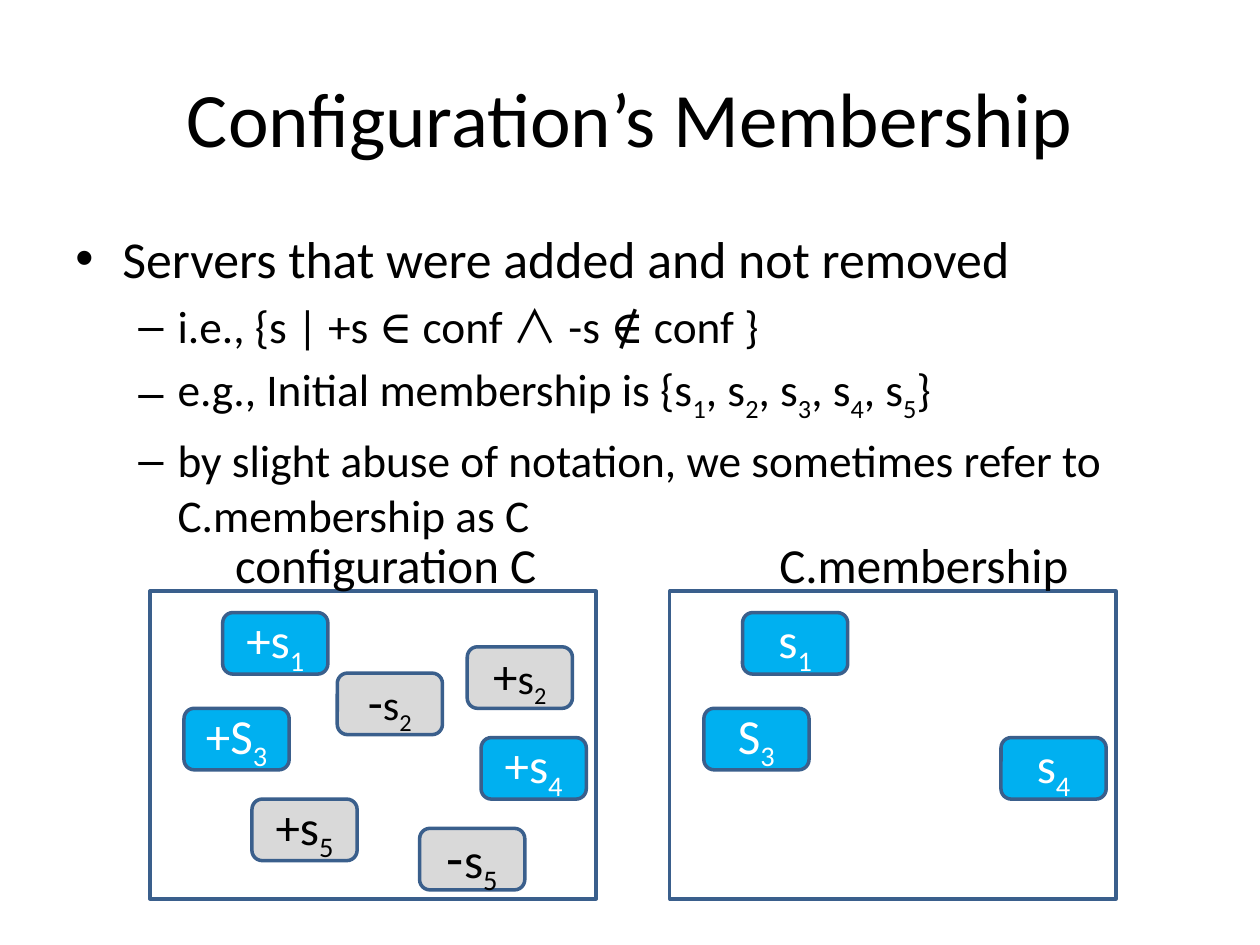
from lxml import etree
from pptx import Presentation
from pptx import util as u
from pptx.dml.color import RGBColor
from pptx.enum import shapes, text
from pptx.oxml.ns import qn

BLACK, WHITE, BLUE, GREY, BORDER = "000000", "FFFFFF", "00B0F0", "D9D9D9", "3A5F8C"
SYMBOL_FONTS = {"∈": "Cambria", "∉": "Cambria", "∧": "Noto Sans CJK KR"}

# Server entries: sign, name, sign size, name size, fill, offset in the frame (cm)
KEPT = [
    ("+", "s_1", 28, 28, BLUE, 1.47, 0.43),
    ("+", "s_4", 28, 28, BLUE, 6.68, 2.95),
    ("+", "S_3", 28, 28, BLUE, 0.69, 2.36),
]
REMOVED = [
    ("+", "s_2", 28, 24, GREY, 6.4, 1.12),
    ("+", "s_5", 28, 28, GREY, 2.06, 4.19),
    ("-", "s_2", 28, 24, GREY, 3.78, 1.65),
    ("-", "s_5", 32, 28, GREY, 5.44, 4.78),
]


def rgb(color):
    return RGBColor.from_string(color)


def add_run(paragraph, words, size, color=BLACK, font="Calibri", lowered=False):
    run = paragraph.add_run()
    run.text = words
    run.font.size = u.Pt(size)
    run.font.color.rgb = rgb(color)
    run.font.name = font
    properties = run.font._element
    etree.SubElement(properties, qn("a:ea")).set("typeface", font)
    if lowered:
        properties.set("baseline", "-25000")


def add_indexed(paragraph, words, size, color=BLACK):
    """Add runs; the character after each underscore becomes a subscript."""
    first, *rest = words.split("_")
    add_run(paragraph, first, size, color)
    for part in rest:
        add_run(paragraph, part[0], size, color, lowered=True)
        if part[1:]:
            add_run(paragraph, part[1:], size, color)


def add_formula(paragraph, words, size):
    """Add runs, giving each set symbol and its space their own font."""
    plain = ""
    for piece in words.split(" "):
        if piece in SYMBOL_FONTS:
            add_run(paragraph, plain, size)
            add_run(paragraph, piece + " ", size, font=SYMBOL_FONTS[piece])
            plain = ""
        else:
            plain += piece + " "
    add_run(paragraph, plain.rstrip(), size)


def add_text_area(slide, left, top, width, height):
    area = slide.shapes.add_textbox(u.Cm(left), u.Cm(top), u.Cm(width), u.Cm(height))
    area.text_frame.word_wrap = True
    return area.text_frame


def set_bullet(paragraph, mark, margin, hanging, space):
    paragraph.space_before = u.Pt(space)
    properties = paragraph._p.get_or_add_pPr()
    properties.set("marL", str(u.Cm(margin)))
    properties.set("indent", str(-u.Cm(hanging)))
    etree.SubElement(properties, qn("a:buFont")).set("typeface", "Arial")
    etree.SubElement(properties, qn("a:buChar")).set("char", mark)


def draw_title(slide, left, top, width, height):
    frame = add_text_area(slide, left, top, width, height)
    frame.vertical_anchor = text.MSO_ANCHOR.MIDDLE
    heading = frame.paragraphs[0]
    heading.alignment = text.PP_ALIGN.CENTER
    add_run(heading, "Configuration’s Membership", 44)


def draw_points(slide, left, top, width, height):
    frame = add_text_area(slide, left, top, width, height)
    main_point = frame.paragraphs[0]
    set_bullet(main_point, "•", 0.95, 0.95, 6)
    add_run(main_point, "Servers that were added and not removed", 29.6)
    details = [
        (add_formula, "i.e., {s | +s ∈ conf ∧ -s ∉ conf }"),
        (add_indexed, "e.g., Initial membership is {s_1, s_2, s_3, s_4, s_5}"),
        (add_indexed, "by slight abuse of notation, we sometimes refer to "
                      "C.membership as C"),
    ]
    for write, words in details:
        detail = frame.add_paragraph()
        detail.level = 1
        set_bullet(detail, "–", 2.06, 0.79, 5.2)
        write(detail, words, 25.9)


def add_box(slide, kind, left, top, width, height, fill=None):
    box = slide.shapes.add_shape(kind, u.Cm(left), u.Cm(top), u.Cm(width), u.Cm(height))
    box.shadow.inherit = False
    box.line.color.rgb = rgb(BORDER)
    box.line.width = u.Pt(2)
    if fill:
        box.fill.solid()
        box.fill.fore_color.rgb = rgb(fill)
    else:
        box.fill.background()
    return box


def draw_servers(slide, left, top, width, height, label, label_dx, servers, signed):
    # Frame
    add_box(slide, shapes.MSO_SHAPE.RECTANGLE, left, top, width, height)

    # Server entries
    for sign, name, sign_size, name_size, fill, dx, dy in servers:
        server = add_box(slide, shapes.MSO_SHAPE.ROUNDED_RECTANGLE,
                         left + dx, top + dy, 2.12, 1.24, fill)
        frame = server.text_frame
        frame.vertical_anchor = text.MSO_ANCHOR.MIDDLE
        entry = frame.paragraphs[0]
        entry.alignment = text.PP_ALIGN.CENTER
        color = WHITE if fill == BLUE else BLACK
        if signed:
            add_run(entry, sign, sign_size, color)
        add_indexed(entry, name, name_size, color)

    # Label above the frame
    caption = add_text_area(slide, left + label_dx, top - 1.27, 7.26, 1.45)
    add_run(caption.paragraphs[0], label, 28)


def main():
    deck = Presentation()
    deck.slide_width, deck.slide_height = u.Cm(25.4), u.Cm(19.05)
    slide = deck.slides.add_slide(deck.slide_layouts[6])
    draw_title(slide, 1.27, 0.76, 22.86, 3.18)
    draw_points(slide, 1.27, 4.45, 22.86, 6.53)
    draw_servers(slide, 3.02, 11.92, 9, 6.2, "configuration C", 1.47, KEPT + REMOVED, True)
    draw_servers(slide, 13.5, 11.92, 9, 6.2, "C.membership", 1.96, KEPT, False)
    deck.save("out.pptx")


if __name__ == "__main__":
    main()
